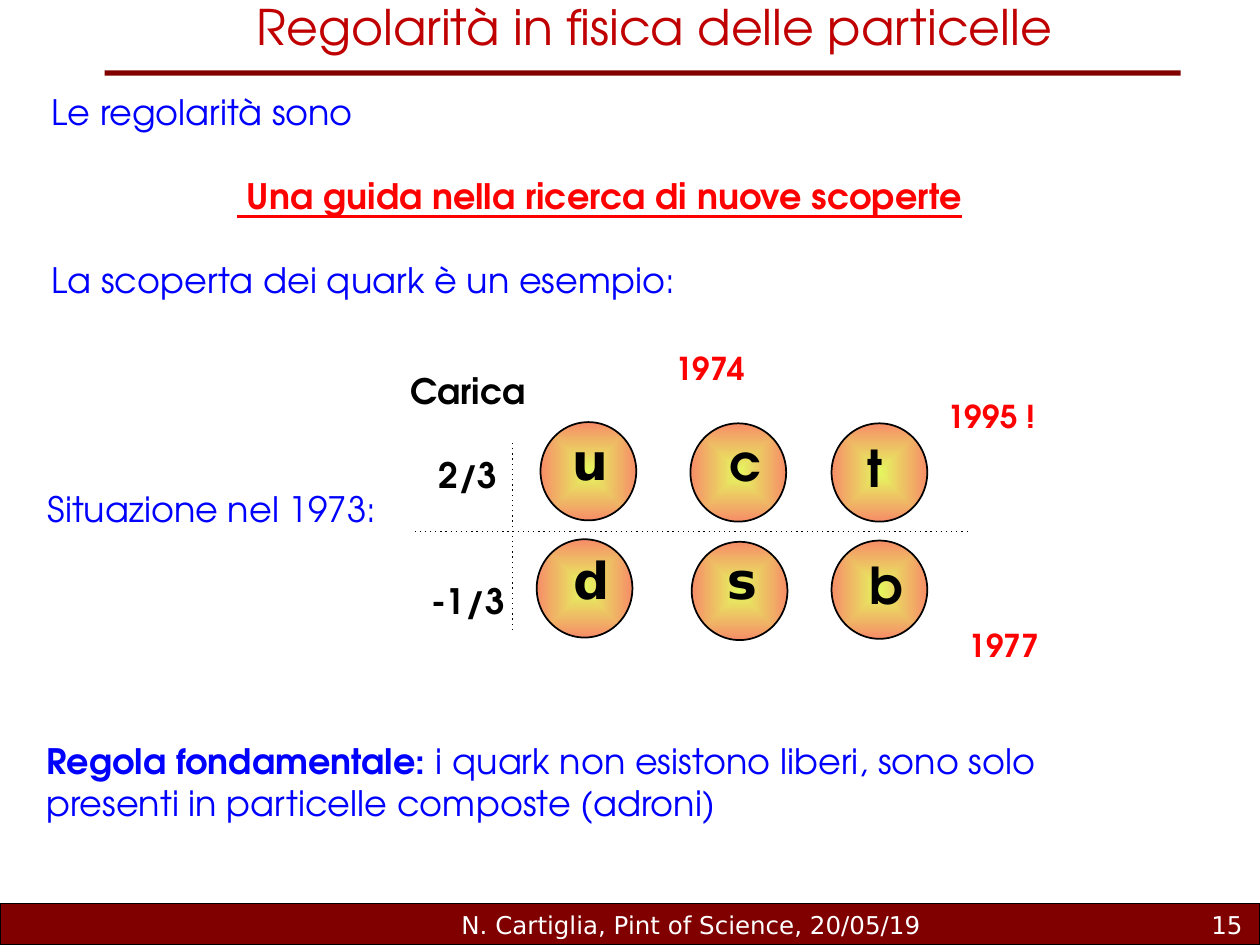
from dataclasses import dataclass

from lxml import etree
from pptx import Presentation
from pptx.dml.color import RGBColor
from pptx.enum.dml import MSO_LINE
from pptx.enum.shapes import MSO_CONNECTOR, MSO_SHAPE
from pptx.enum.text import MSO_ANCHOR, MSO_AUTO_SIZE, PP_ALIGN
from pptx.oxml.ns import qn
from pptx.util import Inches, Pt

LEFT, MID, RIGHT = PP_ALIGN.LEFT, PP_ALIGN.CENTER, PP_ALIGN.RIGHT
TOP = MSO_ANCHOR.TOP
FIXED, GROW = MSO_AUTO_SIZE.NONE, MSO_AUTO_SIZE.SHAPE_TO_FIT_TEXT
RECT, OVAL = MSO_SHAPE.RECTANGLE, MSO_SHAPE.OVAL
STRAIGHT, DOT = MSO_CONNECTOR.STRAIGHT, MSO_LINE.ROUND_DOT

SANS = "DejaVu Sans"
GEO = "TeX Gyre Adventor"
HEX = {
    "bar": "800000", "title": "C00000", "blue": "0000FF", "red": "FF0000",
    "black": "000000", "white": "FFFFFF", "core": "E5F75F", "rim": "F68D68",
}
LINE = 24  # height in points of one line of body text


@dataclass
class Run:
    text: str
    size: float = 20
    color: str = "blue"
    bold: bool = False
    under: bool = False
    font: str = GEO


@dataclass
class Para:
    runs: list[Run]
    align: PP_ALIGN = LEFT
    before: float = 0


@dataclass
class Quark:
    name: str
    left: float
    top: float
    text_left: float
    text_top: float
    text_width: float
    font: str


@dataclass
class Year:
    text: str
    left: float
    top: float
    width: float


QUARKS = [
    Quark("u", 4.29, 3.35, 4.44, 3.36, 0.47, SANS),
    Quark("d", 4.26, 4.28, 4.45, 4.31, 0.47, SANS),
    Quark("c", 5.48, 3.36, 5.69, 3.37, 0.44, GEO),
    Quark("s", 5.49, 4.3, 5.67, 4.31, 0.42, SANS),
    Quark("t", 6.6, 3.36, 6.79, 3.42, 0.31, GEO),
    Quark("b", 6.6, 4.29, 6.8, 4.35, 0.45, GEO),
]
YEARS = [
    Year("1974", 5.26, 2.72, 0.77),
    Year("1995 !", 7.42, 3.1, 0.91),
    Year("1977", 7.59, 4.92, 0.77),
]


def rgb(name: str) -> RGBColor:
    return RGBColor.from_string(HEX[name])


def write(frame, paras: list[Para]) -> None:
    for i, para in enumerate(paras):
        line = frame.add_paragraph() if i else frame.paragraphs[0]
        line.alignment = para.align
        line.space_before = Pt(para.before)
        for part in para.runs:
            run = line.add_run()
            run.text = part.text
            font = run.font
            font.size, font.name = Pt(part.size), part.font
            font.bold, font.underline = part.bold, part.under
            font.color.rgb = rgb(part.color)


def add_text(slide, box: tuple, paras: list[Para], wrap: bool = True) -> None:
    frame = slide.shapes.add_textbox(*map(Inches, box)).text_frame
    frame.word_wrap = wrap
    frame.auto_size = GROW
    write(frame, paras)


def add_bar(slide, box: tuple, edge: bool):
    bar = slide.shapes.add_shape(RECT, *map(Inches, box))
    bar.shadow.inherit = False
    bar.fill.solid()
    bar.fill.fore_color.rgb = rgb("bar")
    if edge:
        bar.line.color.rgb = rgb("black")
        bar.line.width = Pt(0.75)
    else:
        bar.line.fill.background()


def glow(fill) -> None:
    """Fill from a bright core outwards to the rim."""
    fill.gradient()
    for stop, name in zip(fill.gradient_stops, ("core", "rim")):
        stop.color.rgb = rgb(name)


def add_quark(slide, quark: Quark) -> None:
    ball = slide.shapes.add_shape(
        OVAL, Inches(quark.left), Inches(quark.top), Inches(0.76), Inches(0.78))
    ball.shadow.inherit = False
    ball.line.color.rgb = rgb("black")
    ball.line.width = Pt(1)
    glow(ball.fill)
    grad = ball.element.spPr.find(qn("a:gradFill"))
    grad.remove(grad.find(qn("a:lin")))
    path = etree.SubElement(grad, qn("a:path"), {"path": "shape"})
    etree.SubElement(path, qn("a:fillToRect"), dict.fromkeys("ltrb", "50000"))

    box = (quark.text_left, quark.text_top, quark.text_width, 0.57)
    letter = Run(quark.name, 29, "black", True, font=quark.font)
    add_text(slide, box, [Para([letter])], wrap=False)


def add_axis(slide, ends: tuple) -> None:
    axis = slide.shapes.add_connector(STRAIGHT, *map(Inches, ends))
    axis.line.color.rgb = rgb("black")
    axis.line.width = Pt(0.75)
    axis.line.dash_style = DOT
    props = axis.element.spPr
    props.find(".//" + qn("a:prstDash")).set("val", "dot")
    etree.SubElement(props, qn("a:effectLst"))


def add_title(slide, text: str) -> None:
    title = slide.shapes.title
    title.left, title.top = Inches(0.45), Inches(-0.08)
    title.width, title.height = Inches(9.49), Inches(0.57)
    frame = title.text_frame
    frame.auto_size = FIXED
    frame.vertical_anchor = TOP
    write(frame, [Para([Run(text, 28, "title")], MID)])


def main() -> None:
    deck = Presentation()
    deck.slide_width, deck.slide_height = Inches(10), Inches(7.5)
    slide = deck.slides.add_slide(deck.slide_layouts[5])

    add_bar(slide, (0, 7.17, 10, 0.33), edge=True)
    add_bar(slide, (0.83, 0.56, 8.54, 0.04), edge=False)
    add_title(slide, "Regolarità in fisica delle particelle")

    foot = Run("N. Cartiglia, Pint of Science, 20/05/19", 14, "white", font=SANS)
    add_text(slide, (3.43, 7.17, 4.11, 0.33), [Para([foot], MID)])
    number = Run("15", 14, "white", font=SANS)
    add_text(slide, (7.88, 7.17, 2.08, 0.33), [Para([number], RIGHT)])

    guide = Run(" Una guida nella ricerca di nuove scoperte", 20, "red", True, True)
    add_text(slide, (0.31, 0.67, 8.9, 1.78), [
        Para([Run("Le regolarità sono")]),
        Para([guide], MID, LINE),
        Para([Run("La scoperta dei quark è un esempio:")], LEFT, LINE),
    ])
    add_text(slide, (0.28, 3.82, 3, 0.44), [Para([Run("Situazione nel 1973:")])])

    for quark in QUARKS:
        add_quark(slide, quark)
    for year in YEARS:
        add_text(slide, (year.left, year.top, year.width, 0.4),
                 [Para([Run(year.text, 18, "red", True)])], wrap=False)

    charges = [("Carica", 0), ("2/3", LINE), ("-1/3", 2 * LINE)]
    add_text(slide, (3.15, 2.88, 1.13, 2.12), [
        Para([Run(text, 20, "black", True)], MID, gap) for text, gap in charges
    ], wrap=False)
    add_axis(slide, (3.29, 4.22, 7.7, 4.22))
    add_axis(slide, (4.07, 5, 4.07, 3.51))

    add_text(slide, (0.27, 5.82, 8.9, 0.77), [Para([
        Run("Regola fondamentale: ", bold=True),
        Run("i quark non esistono liberi, sono solo presenti in particelle"
            " composte (adroni)"),
    ])])
    deck.save("out.pptx")


if __name__ == "__main__":
    main()
